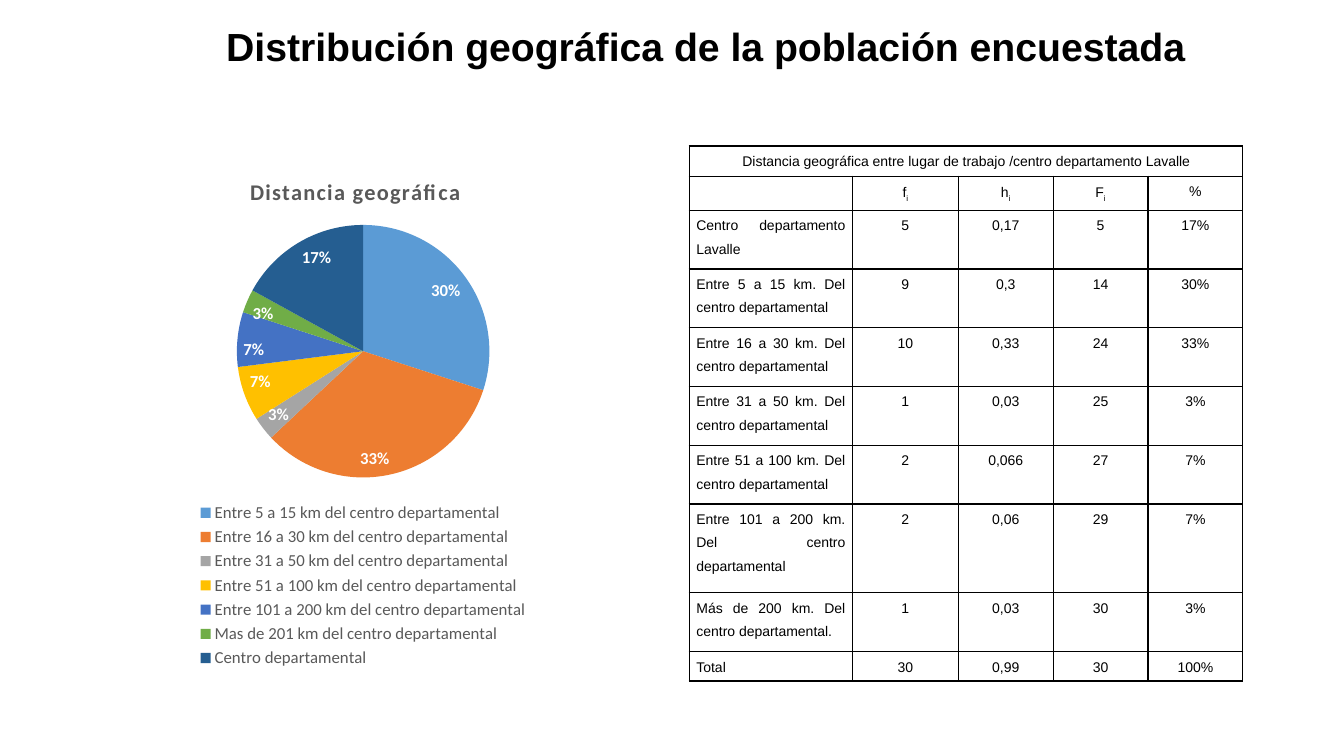
from lxml import etree
from pptx import Presentation
from pptx import util as u
from pptx.chart.data import CategoryChartData
from pptx.dml.color import RGBColor
from pptx.enum import chart as charts, text
from pptx.oxml import ns

FONT = "Arial"
CHART_FONT = "Calibri"
BLACK, GREY, WHITE = "000000", "595959", "FFFFFF"

# Category, percentage and slice colour
SLICES = [
    ("Entre 5 a 15 km del centro departamental", 30, "5B9BD5"),
    ("Entre 16 a 30 km del centro departamental", 33, "ED7D31"),
    ("Entre 31 a 50 km del centro departamental", 3, "A5A5A5"),
    ("Entre 51 a 100 km del centro departamental", 7, "FFC000"),
    ("Entre 101 a 200 km del centro departamental", 7, "4472C4"),
    ("Mas de 201 km del centro departamental", 3, "70AD47"),
    ("Centro departamental", 17, "255E91"),
]

TABLE_TITLE = "Distancia geográfica entre lugar de trabajo /centro departamento Lavalle"
TABLE_ROWS = [
    (TABLE_TITLE, "", "", "", ""),
    ("", "fi", "hi", "Fi", "%"),
    ("Centro departamento Lavalle", "5", "0,17", "5", "17%"),
    ("Entre 5 a 15 km. Del centro departamental", "9", "0,3", "14", "30%"),
    ("Entre 16 a 30 km. Del centro departamental", "10", "0,33", "24", "33%"),
    ("Entre 31 a 50 km. Del centro departamental", "1", "0,03", "25", "3%"),
    ("Entre 51 a 100 km. Del centro departamental", "2", "0,066", "27", "7%"),
    ("Entre 101 a 200 km. Del centro departamental", "2", "0,06", "29", "7%"),
    ("Más de 200 km. Del centro departamental.", "1", "0,03", "30", "3%"),
    ("Total", "30", "0,99", "30", "100%"),
]
COLUMN_WIDTHS = [4.11, 2.67, 2.39, 2.39, 2.39]
ROW_HEIGHTS = [0.76, 0.86] + [1.48] * 5 + [2.24, 1.48, 0.74]


def color(hex_string):
    return RGBColor.from_string(hex_string)


def style_font(font, name, size, hex_string, bold=False):
    font.name = name
    font.size = u.Pt(size)
    font.bold = bold
    font.color.rgb = color(hex_string)


def add_title(slide, left, top, width, height):
    title = slide.shapes.title
    title.left, title.top, title.width, title.height = left, top, width, height
    frame = title.text_frame
    frame.text = "Distribución geográfica de la población encuestada"
    frame.vertical_anchor = text.MSO_ANCHOR.TOP
    frame.word_wrap = True
    paragraph = frame.paragraphs[0]
    paragraph.alignment = text.PP_ALIGN.CENTER
    paragraph.line_spacing = 0.9
    style_font(paragraph.runs[0].font, FONT, 28, BLACK, True)


def place_chart_part(part, **fractions):
    """Give a chart part a manual layout in fractions of the chart."""
    for old_layout in part.findall(ns.qn("c:layout")):
        part.remove(old_layout)
    layout = etree.Element(ns.qn("c:layout"))
    manual = etree.SubElement(layout, ns.qn("c:manualLayout"))
    if part.tag == ns.qn("c:plotArea"):
        etree.SubElement(manual, ns.qn("c:layoutTarget")).set("val", "inner")
    for mode in ("xMode", "yMode"):
        etree.SubElement(manual, ns.qn("c:" + mode)).set("val", "edge")
    for name, value in fractions.items():
        etree.SubElement(manual, ns.qn("c:" + name)).set("val", str(value))
    overlay = part.find(ns.qn("c:overlay"))
    part.insert(0 if overlay is None else part.index(overlay), layout)


def add_distance_pie(slide, left, top, width, height):
    chart_data = CategoryChartData()
    chart_data.categories = [name for name, _, _ in SLICES]
    chart_data.add_series("Distancia geográfica", [value for _, value, _ in SLICES])
    chart = slide.shapes.add_chart(
        charts.XL_CHART_TYPE.PIE, left, top, width, height, chart_data).chart
    style_font(chart.font, CHART_FONT, 10, BLACK)

    # Heading
    chart.has_title = True
    heading = chart.chart_title
    heading.include_in_layout = False
    heading.text_frame.text = "Distancia geográfica"
    run = heading.text_frame.paragraphs[0].runs[0]
    style_font(run.font, CHART_FONT, 16, GREY, True)
    run._r.get_or_add_rPr().set("spc", "100")
    place_chart_part(heading._element, x=0.3, y=0.05)

    # Slices and percentages
    plot = chart.plots[0]
    plot.vary_by_categories = True
    for index, (_, _, slice_color) in enumerate(SLICES):
        fill = plot.series[0].points[index].format.fill
        fill.solid()
        fill.fore_color.rgb = color(slice_color)
    plot.has_data_labels = True
    labels = plot.data_labels
    labels.show_percentage = True
    labels.show_value = False
    labels.number_format = "0%"
    labels.number_format_is_linked = False
    labels.position = charts.XL_LABEL_POSITION.INSIDE_END
    style_font(labels.font, CHART_FONT, 12, WHITE, True)
    place_chart_part(plot._element.getparent(), x=0.28, y=0.15, w=0.45, h=0.48)

    # Legend
    chart.has_legend = True
    legend = chart.legend
    legend.position = charts.XL_LEGEND_POSITION.BOTTOM
    legend.include_in_layout = False
    style_font(legend.font, CHART_FONT, 12, GREY)
    place_chart_part(legend._element, x=0.21, y=0.67, w=0.59, h=0.33)


def add_borders(cell):
    properties = cell._tc.get_or_add_tcPr()
    for side in ("lnL", "lnR", "lnT", "lnB"):
        line = etree.SubElement(properties, ns.qn("a:" + side), w=str(u.Pt(1)))
        fill = etree.SubElement(line, ns.qn("a:solidFill"))
        etree.SubElement(fill, ns.qn("a:srgbClr"), val=BLACK)


def fill_cell(cell, content, alignment):
    add_borders(cell)
    cell.fill.background()
    cell.margin_left = cell.margin_right = u.Cm(0.18)
    cell.margin_top = cell.margin_bottom = 0
    paragraph = cell.text_frame.paragraphs[0]
    paragraph.alignment = alignment
    paragraph.line_spacing = 1.5
    if not content:
        paragraph._p.get_or_add_endParaRPr().set("sz", "1000")
        return
    # Frequency symbols carry a subscript index
    has_index = content in ("fi", "hi", "Fi")
    for part in content if has_index else [content]:
        run = paragraph.add_run()
        run.text = part
        style_font(run.font, FONT, 10, BLACK)
        if has_index and part == "i":
            run._r.get_or_add_rPr().set("baseline", "-25000")


def add_frequency_table(slide, left, top, width, height):
    table = slide.shapes.add_table(
        len(TABLE_ROWS), len(COLUMN_WIDTHS), left, top, width, height).table
    table.first_row = table.horz_banding = False
    for column, column_width in zip(table.columns, COLUMN_WIDTHS):
        column.width = u.Cm(column_width)
    for row, row_height in zip(table.rows, ROW_HEIGHTS):
        row.height = u.Cm(row_height)
    table.cell(0, 0).merge(table.cell(0, len(COLUMN_WIDTHS) - 1))
    for row_index, values in enumerate(TABLE_ROWS):
        for column_index, content in enumerate(values):
            is_row_name = row_index > 0 and column_index == 0
            alignment = text.PP_ALIGN.JUSTIFY if is_row_name else text.PP_ALIGN.CENTER
            fill_cell(table.cell(row_index, column_index), content, alignment)


def main():
    presentation = Presentation()
    presentation.slide_width = u.Cm(33.87)
    presentation.slide_height = u.Cm(19.05)
    slide = presentation.slides.add_slide(presentation.slide_layouts[5])
    add_title(slide, u.Cm(3.18), u.Cm(0.58), u.Cm(29.21), u.Cm(3.68))
    content_top = u.Cm(3.68)
    add_distance_pie(slide, u.Cm(1.88), content_top, u.Cm(14.4), u.Cm(13.26))
    add_frequency_table(slide, u.Cm(17.37), content_top,
                        u.Cm(sum(COLUMN_WIDTHS)), u.Cm(sum(ROW_HEIGHTS)))
    presentation.save("out.pptx")


if __name__ == "__main__":
    main()
